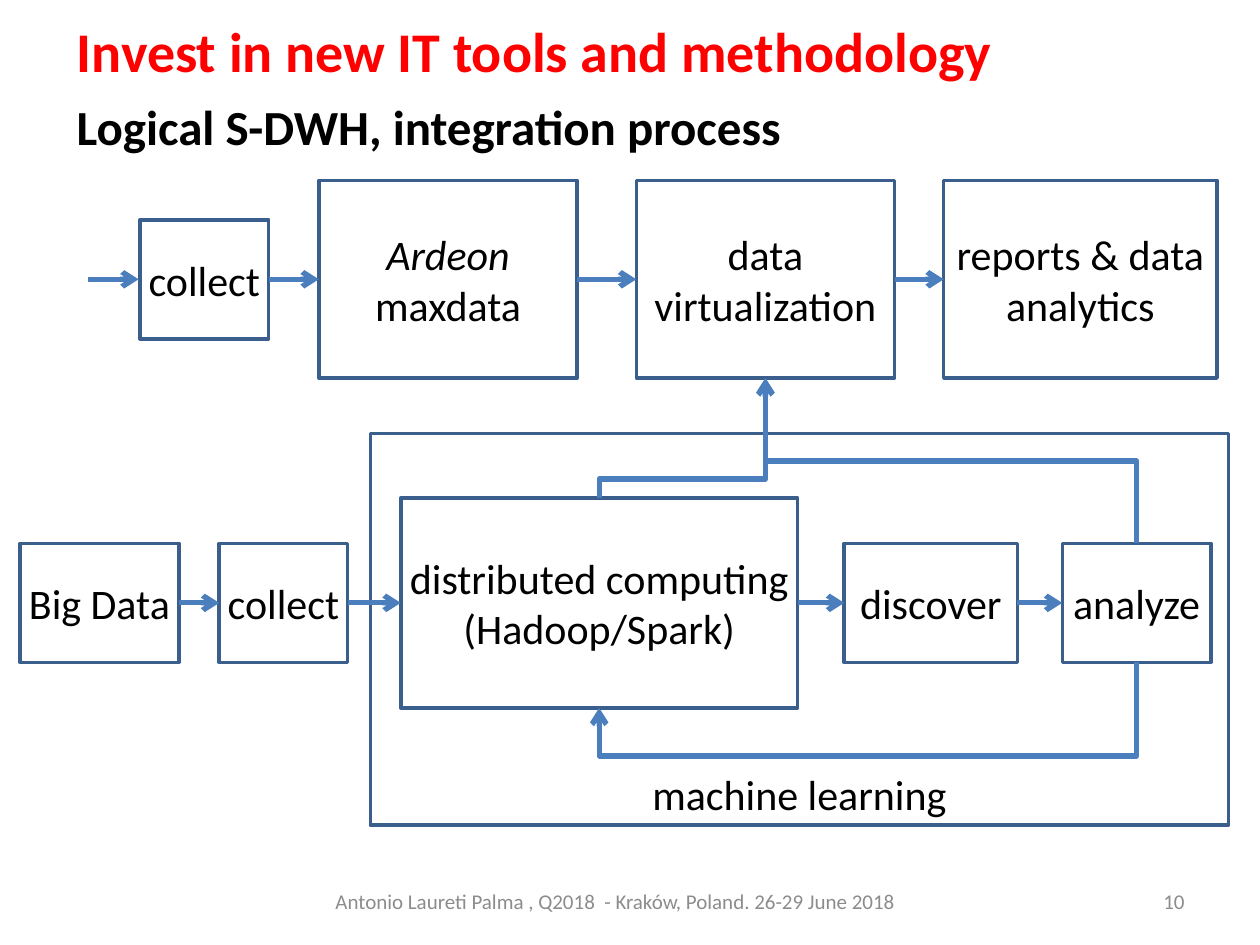
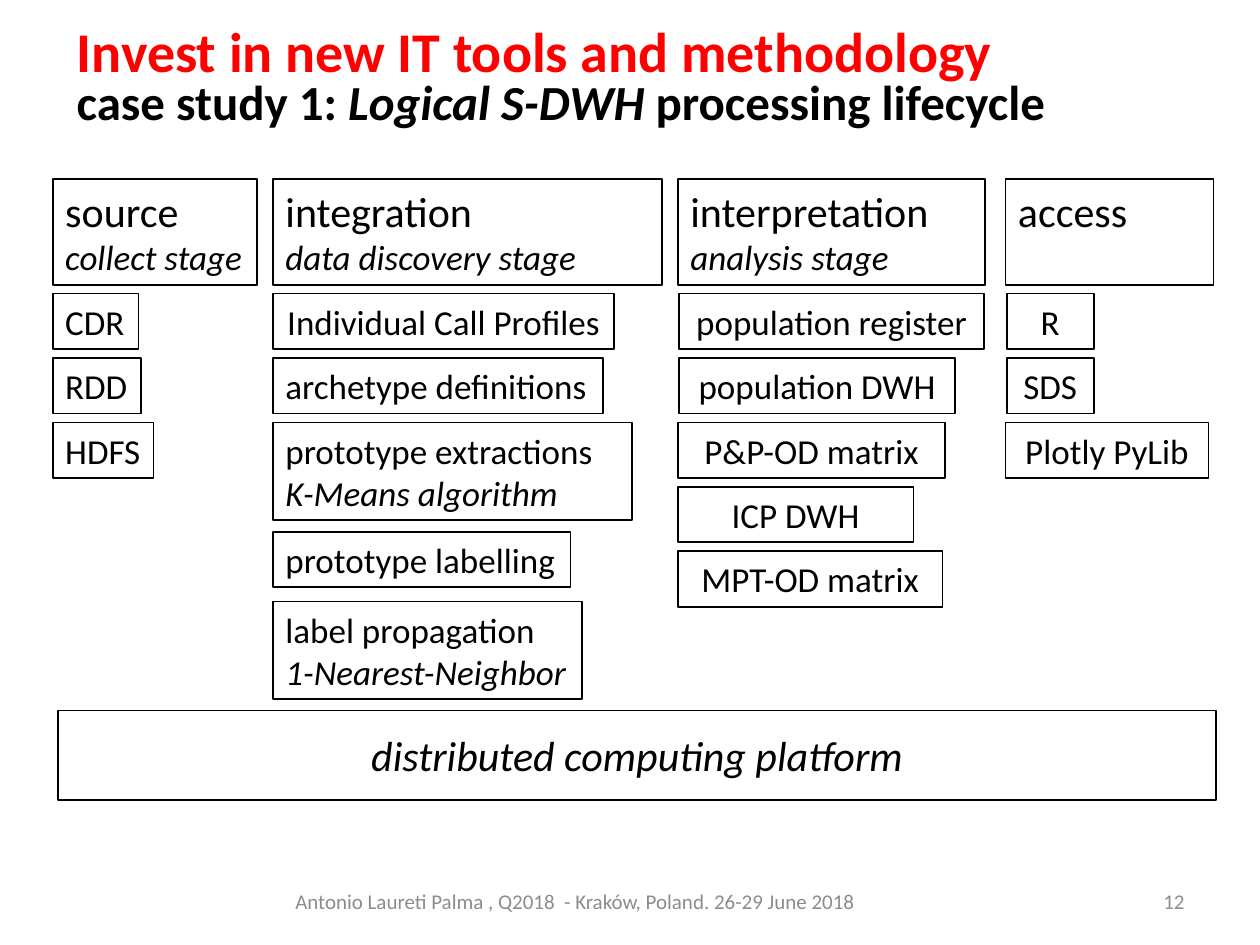
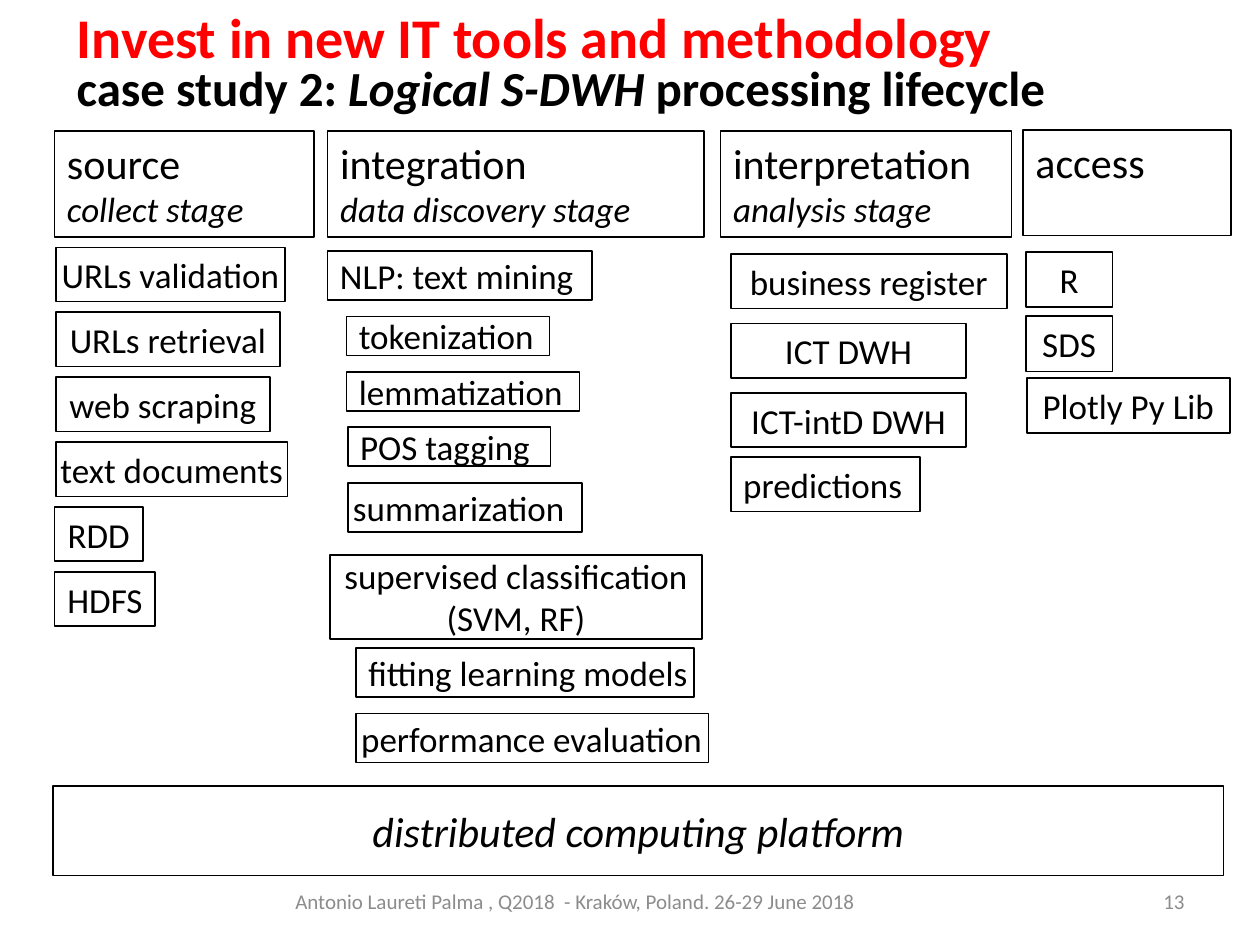
from dataclasses import dataclass

from lxml.etree import SubElement
from pptx import Presentation
from pptx.dml.color import RGBColor
from pptx.enum.shapes import MSO_CONNECTOR, MSO_SHAPE
from pptx.enum.text import MSO_ANCHOR, MSO_AUTO_SIZE, PP_ALIGN
from pptx.oxml.ns import qn
from pptx.util import Pt

COLORS = {"title": "FF0000", "text": "000000", "footer": "8C8C8C", "white": "FFFFFF",
          "flow_box": "3A5F8C", "arrow": "4B7EBC"}
FONT = "Calibri"
TITLE = "Invest in new IT tools and methodology"
FOOTER = "Antonio Laureti Palma , Q2018  - Kraków, Poland. 26-29 June 2018"
LEFT, CENTER, RIGHT = PP_ALIGN.LEFT, PP_ALIGN.CENTER, PP_ALIGN.RIGHT
TOP, MIDDLE, BOTTOM = MSO_ANCHOR.TOP, MSO_ANCHOR.MIDDLE, MSO_ANCHOR.BOTTOM
SITE_TOP, SITE_LEFT, SITE_BOTTOM, SITE_RIGHT = range(4)
INSET, TIGHT = 7.2, 3
HEADER_HEIGHT = 60.4


@dataclass
class Item:
    """A step below a stage header; gap, height and align override those of its column."""
    text: str
    width: float
    note: str = ""
    dx: float = 0
    gap: float | None = None
    height: float | None = None
    align: PP_ALIGN | None = None
    inset: float = INSET
    wrap: bool = False


def rgb(name):
    return RGBColor.from_string(COLORS[name])


def place(sp, box):
    sp.left, sp.top, sp.width, sp.height = map(Pt, box)


def write(sp, paragraphs, size, color="text", bold=False, align=LEFT, anchor=TOP,
          inset=INSET, wrap=True):
    """Fill a shape; each paragraph is a list of (text, italic[, size]) runs."""
    tf = sp.text_frame
    tf.auto_size = MSO_AUTO_SIZE.NONE
    tf.word_wrap = wrap
    tf.vertical_anchor = anchor
    tf.margin_left = tf.margin_right = Pt(inset)
    tf.margin_top = tf.margin_bottom = Pt(3.6)
    for i, runs in enumerate(paragraphs):
        p = tf.add_paragraph() if i else tf.paragraphs[0]
        p.alignment = align
        for text, italic, *own_size in runs:
            r = p.add_run()
            r.text = text
            r.font.name = FONT
            r.font.size = Pt(own_size[0] if own_size else size)
            r.font.bold = bold
            r.font.italic = italic
            r.font.color.rgb = rgb(color)


def add_label(slide, box, runs, size, **style):
    sp = slide.shapes.add_textbox(*map(Pt, box))
    write(sp, [runs], size, **style)


def add_box(slide, box, paragraphs, size, line="text", weight=1, fill=None, **style):
    sp = slide.shapes.add_shape(MSO_SHAPE.RECTANGLE, *map(Pt, box))
    sp.shadow.inherit = False
    if fill:
        sp.fill.solid()
        sp.fill.fore_color.rgb = rgb(fill)
    else:
        sp.fill.background()
    sp.line.color.rgb = rgb(line)
    sp.line.width = Pt(weight)
    write(sp, paragraphs, size, **style)
    return sp


def add_base_slide(prs, number, subtitle, title_top, subtitle_top, footer_center):
    slide = prs.slides.add_slide(prs.slide_layouts[5])
    title = slide.shapes.title
    place(title, (36.7, title_top, 542, 46))
    write(title, [[(TITLE, False)]], 32, color="title", bold=True, wrap=False)
    add_label(slide, (36.7, subtitle_top, 660, 41), subtitle, 28, bold=True)
    add_label(slide, (footer_center - 213, 500.4, 426, 28.8), [(FOOTER, False)], 12,
              color="footer", align=CENTER, anchor=MIDDLE)
    add_label(slide, (516, 500.4, 168, 28.8), [(str(number), False)], 12,
              color="footer", align=RIGHT, anchor=MIDDLE)
    return slide


# Process flow

def style_arrow(c):
    c.line.color.rgb = rgb("arrow")
    c.line.width = Pt(3)
    SubElement(c.line._get_or_add_ln(), qn("a:tailEnd"), type="arrow")
    SubElement(c.element.spPr, qn("a:effectLst"))


def add_arrow(slide, start, end):
    """Straight arrow between the facing sides of two boxes."""
    c = slide.shapes.add_connector(MSO_CONNECTOR.STRAIGHT, 0, 0, 0, 0)
    c.begin_connect(start, SITE_RIGHT)
    c.end_connect(end, SITE_LEFT)
    style_arrow(c)


def add_elbow(slide, start, start_site, end, end_site, lane):
    """Arrow that leaves vertically, crosses at height lane and arrives vertically."""
    c = slide.shapes.add_connector(MSO_CONNECTOR.ELBOW, 0, 0, 0, 0)
    c.begin_connect(start, start_site)
    c.end_connect(end, end_site)
    x1, y1, x2, y2 = c.begin_x, c.begin_y, c.end_x, c.end_y
    down, right = y2 > y1, x2 > x1
    c.width, c.height = abs(y2 - y1), abs(x2 - x1)
    c.left, c.top = (x1 + x2 - c.width) // 2, (y1 + y2 - c.height) // 2
    xfrm = c.element.spPr.find(qn("a:xfrm"))
    xfrm.set("rot", str((90 if down else 270) * 60000))
    xfrm.set("flipH", "0")
    xfrm.set("flipV", "1" if down == right else "0")
    guides = c.element.spPr.find(qn("a:prstGeom")).find(qn("a:avLst"))
    bend = round((Pt(lane) - y1) / (y2 - y1) * 100000)
    SubElement(guides, qn("a:gd"), name="adj1", fmla=f"val {bend}")
    style_arrow(c)


def add_row(slide, middle, height, steps):
    """Boxes centred on one line and joined by arrows; a step is (x, w, h, paragraphs, inset)."""
    boxes = []
    for x, w, h, paragraphs, inset in steps:
        boxes.append(add_box(slide, (x, middle - (h or height) / 2, w, h or height), paragraphs,
                             24, line="flow_box", weight=2, fill="white", align=CENTER,
                             anchor=MIDDLE, inset=inset))
    for start, end in zip(boxes, boxes[1:]):
        add_arrow(slide, start, end)
    return boxes


def add_integration_flow(slide):
    add_box(slide, (211.7, 247.7, 490.3, 223.9), [[("machine learning", False)]], 24,
            line="flow_box", weight=2, align=CENTER, anchor=BOTTOM, inset=TIGHT)
    middle = 159.6
    _, _, virtualization, _ = add_row(slide, middle, 113, [
        (80, 73.6, 68, [[("collect", False)]], TIGHT),
        (182.2, 147.6, None, [[("Ardeon ", True), ("maxdata", False)]], INSET),
        (363.6, 147.6, None, [[("data virtualization", False)]], INSET),
        (539.3, 156.2, None, [[("reports & data analytics", False)]], INSET),
    ])
    entry = slide.shapes.add_connector(MSO_CONNECTOR.STRAIGHT, Pt(50.4), Pt(middle),
                                       Pt(79.2), Pt(middle))
    style_arrow(entry)
    computing = [[("distributed computing", False)], [("(Hadoop/Spark)", False)]]
    _, _, cluster, _, analyze = add_row(slide, 344.5, 68, [
        (11.5, 90.7, None, [[("Big Data", False)]], TIGHT),
        (125.3, 73.4, None, [[("collect", False)]], TIGHT),
        (229, 226.8, 120, computing, TIGHT),
        (482.4, 99, None, [[("discover", False)]], TIGHT),
        (607, 85, None, [[("analyze", False)]], TIGHT),
    ])
    add_elbow(slide, analyze, SITE_BOTTOM, cluster, SITE_BOTTOM, 432)
    add_elbow(slide, analyze, SITE_TOP, virtualization, SITE_BOTTOM, 263.5)
    add_elbow(slide, cluster, SITE_TOP, virtualization, SITE_BOTTOM, 273.6)


# Processing lifecycle

def add_stage(slide, left, top, width, name, stage, items, gap, height=31.7, align=CENTER):
    """Header box with its items stacked below it."""
    header = [[(name, False)]] + ([[(stage, True, 20)]] if stage else [])
    add_box(slide, (left, top, width, HEADER_HEIGHT), header, 24)
    y = top + HEADER_HEIGHT
    for item in items:
        y += gap if item.gap is None else item.gap
        h = item.height or height
        lines = [[(text, False)] for text in item.text.split("\n")]
        if item.note:
            lines.append([(item.note, True)])
        add_box(slide, (left + item.dx, y, item.width, h), lines, 20, anchor=MIDDLE,
                align=align if item.align is None else item.align,
                inset=item.inset, wrap=item.wrap)
        y += h


def add_platform(slide, box):
    add_box(slide, box, [[("distributed computing platform", True)]], 24,
            align=CENTER, anchor=MIDDLE)


def lifecycle_subtitle(case):
    return [(f"case study {case}: ", False), ("Logical S-DWH ", True),
            ("processing lifecycle", False)]


def build_integration(prs):
    slide = add_base_slide(prs, 10, [("Logical S-DWH, integration process", False)],
                           5.8, 51.8, 351.7)
    add_integration_flow(slide)


def build_case_one(prs):
    slide = add_base_slide(prs, 12, lifecycle_subtitle(1), 5.8, 37.4, 328.7)
    top, gap = 102.3, 5.1
    add_stage(slide, 30.2, top, 116.6, "source", "collect stage", [
        Item("CDR", 49), Item("RDD", 50.4), Item("HDFS", 57.6)], gap, align=LEFT)
    add_stage(slide, 156, top, 222.5, "integration", "data discovery stage", [
        Item("Individual Call Profiles", 195, align=CENTER),
        Item("archetype definitions", 188.6),
        Item("prototype extractions", 205.2, "K-Means algorithm", height=55.6, wrap=True),
        Item("prototype labelling", 170, gap=7),
        Item("label propagation", 176.4, "1-Nearest-Neighbor", gap=8, height=55.6),
    ], gap, align=LEFT)
    add_stage(slide, 387.4, top, 175.7, "interpretation", "analysis stage", [
        Item("population register", 174.2, dx=0.7), Item("population DWH", 157.7, dx=0.7),
        Item("P&P-OD matrix", 152.6), Item("ICP DWH", 134.6), Item("MPT-OD matrix", 151.2),
    ], gap)
    add_stage(slide, 574.6, top, 118.8, "access", "", [
        Item("R", 49.7, dx=0.7), Item("SDS", 49.7, dx=0.7), Item("Plotly PyLib", 116)], gap)
    add_platform(slide, (33.1, 406, 661.7, 51))


def build_case_two(prs):
    slide = add_base_slide(prs, 13, lifecycle_subtitle(2), -2.2, 29.5, 328.7)
    top = 74.9
    add_stage(slide, 31.2, top, 148.3, "source", "collect stage", [
        Item("URLs validation", 131, dx=0.7), Item("URLs retrieval", 128.2, dx=0.7),
        Item("web scraping", 122.4, dx=0.7), Item("text documents", 132.5, dx=0.7),
        Item("RDD", 50.4), Item("HDFS", 57.6),
    ], 6.1, height=31)
    add_stage(slide, 187.2, top, 215.3, "integration", "data discovery stage", [
        Item("NLP: text mining", 151.2, gap=8),
        Item("tokenization", 116, dx=10.8, height=22.3),
        Item("lemmatization", 133.2, dx=10.8, height=22.3),
        Item("POS tagging", 116, dx=11.5, height=22.3),
        Item("summarization", 134, dx=11.5, inset=TIGHT, wrap=True),
        Item("supervised classification\n(SVM, RF)", 213, dx=1.2, gap=13, height=48.2,
             align=CENTER),
        Item("fitting learning models", 193, dx=16.2, gap=5),
        Item("performance evaluation", 201.6, dx=16.2, inset=TIGHT),
    ], 9.4, height=28.1, align=LEFT)
    add_stage(slide, 411.8, top, 166.3, "interpretation", "analysis stage", [
        Item("business register", 157.7, dx=5.8, gap=10), Item("ICT DWH", 134.6, dx=5.8),
        Item("ICT-intD DWH", 134.6, dx=5.8),
        Item("predictions", 108, dx=5.8, gap=5.8, align=LEFT),
    ], 8.6, height=31)
    add_stage(slide, 584.6, top - 0.7, 118.8, "access", "", [
        Item("R", 49.7, dx=1.5, gap=9.4), Item("SDS", 49.7, dx=1.5),
        Item("Plotly Py Lib", 116, dx=2.2, gap=3.6)], 5)
    add_platform(slide, (30.2, 449.3, 669, 51))


def main():
    prs = Presentation()
    prs.slide_width, prs.slide_height = Pt(720), Pt(540)
    build_integration(prs)
    build_case_one(prs)
    build_case_two(prs)
    prs.save("out.pptx")


if __name__ == "__main__":
    main()
